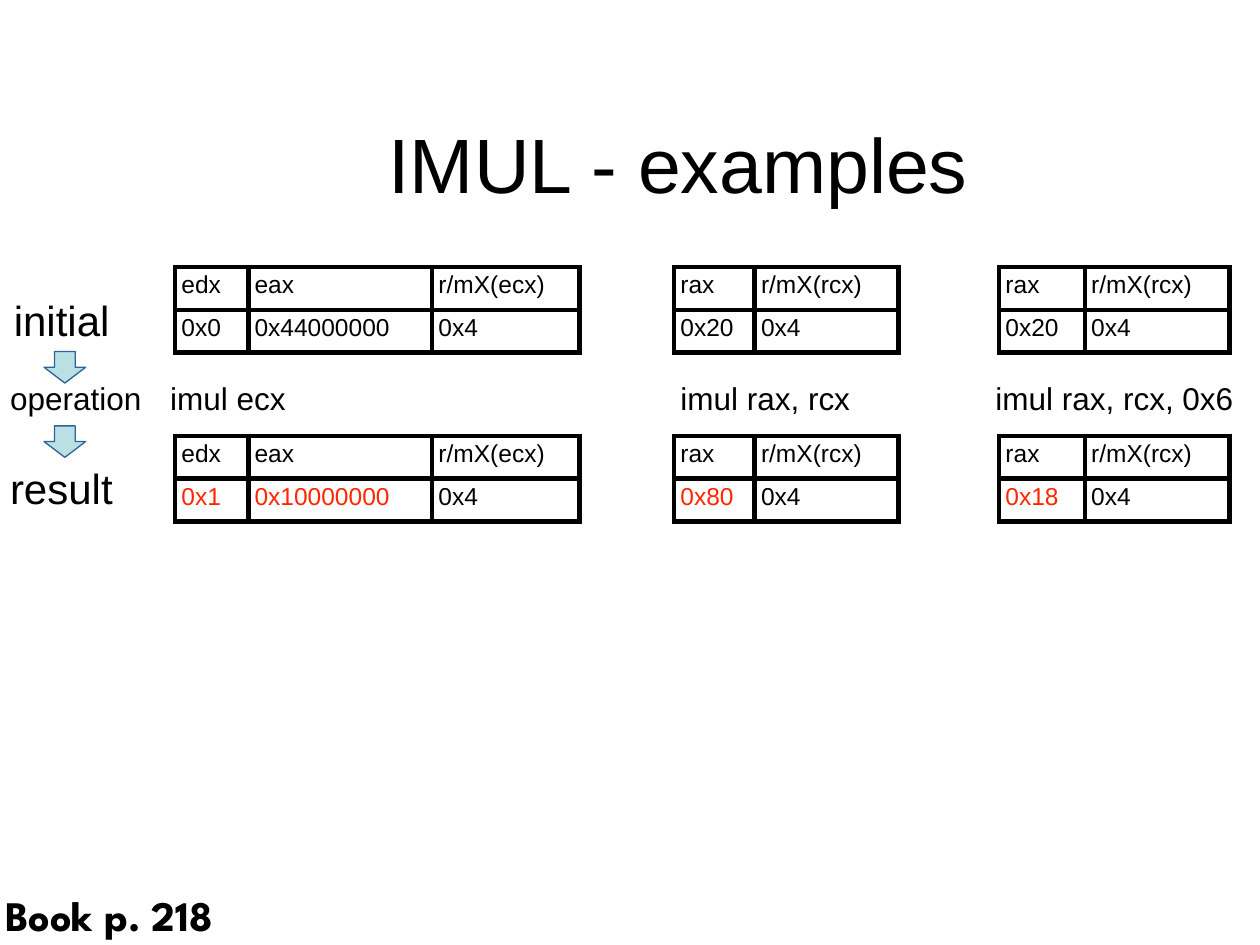
"""Builds the IMUL examples slide with register tables before and after each operation."""
import pptx
import pptx.dml.color
import pptx.enum.shapes
import pptx.enum.text
import pptx.oxml
import pptx.oxml.ns
import pptx.util
from pptx.util import Inches

COLORS = {"text": "000000", "changed": "FF2600", "arrow": "BBE0E3", "outline": "2F6299"}


def rgb(name):
    return pptx.dml.color.RGBColor.from_string(COLORS[name])


def write(frame, text, size, color="text", font="Arial", bold=False):
    para = frame.paragraphs[0]
    span = para.add_run()
    span.text = text
    formats = {"name": font, "size": pptx.util.Pt(size), "bold": bold}
    for key, value in formats.items():
        setattr(span.font, key, value)
    span.font.color.rgb = rgb(color)
    return para


deck = pptx.Presentation()
deck.slide_width, deck.slide_height = Inches(10), Inches(7.5)
page = deck.slides.add_slide(deck.slide_layouts[6])

title = page.shapes.add_textbox(Inches(0.75), Inches(0.56), Inches(9.27), Inches(1.47))
title_format = {
    "margin_left": 0, "margin_right": 0, "margin_top": 0, "margin_bottom": 0,
    "word_wrap": True, "vertical_anchor": pptx.enum.text.MSO_ANCHOR.MIDDLE,
}
for key, value in title_format.items():
    setattr(title.text_frame, key, value)
write(title.text_frame, "IMUL - examples", 44).alignment = pptx.enum.text.PP_ALIGN.CENTER

INITIAL_TOP, RESULT_TOP, ROW_HEIGHT = 2.12, 3.46, 0.34
SIDES = ("left", "right", "top", "bottom")
examples = [
    (1.39, [0.58, 1.46, 1.17], ["edx", "eax", "r/mX(ecx)"],
     ["0x0", "0x44000000", "0x4"], ["0x1", "0x10000000", "0x4"]),
    (5.35, [0.64, 1.14], ["rax", "r/mX(rcx)"], ["0x20", "0x4"], ["0x80", "0x4"]),
    (7.93, [0.68, 1.15], ["rax", "r/mX(rcx)"], ["0x20", "0x4"], ["0x18", "0x4"]),
]
for left, widths, registers, initial, result in examples:
    for top, values in ((INITIAL_TOP, initial), (RESULT_TOP, result)):
        frame = page.shapes.add_table(
            2, len(widths), Inches(left), Inches(top),
            Inches(sum(widths)), Inches(2 * ROW_HEIGHT))
        table = frame.table
        table.first_row = table.horz_banding = False
        for column, width in zip(table.columns, widths):
            column.width = Inches(width)
        for row_index, texts in enumerate((registers, values)):
            table.rows[row_index].height = Inches(ROW_HEIGHT)
            for column_index, text in enumerate(texts):
                cell = table.cell(row_index, column_index)
                for side in SIDES:
                    setattr(cell, f"margin_{side}", Inches(0.05))
                changed = row_index == 1 and text != initial[column_index]
                para = write(cell.text_frame, text, 14, "changed" if changed else "text")
                para.line_spacing = 0.93
                para.space_before = pptx.util.Pt(3)
                properties = cell._tc.get_or_add_tcPr()
                for side in SIDES:
                    properties.append(pptx.oxml.parse_xml(
                        f'<a:ln{side[0].upper()} {pptx.oxml.ns.nsdecls("a")} '
                        f'w="{pptx.util.Pt(3)}"><a:solidFill><a:srgbClr '
                        f'val="{COLORS["text"]}"/></a:solidFill></a:ln{side[0].upper()}>'))
                cell.fill.background()

labels = [
    ("imul ecx", 1.3, 2.96, 1.03, 0.39, 18, "Arial", False),
    ("imul rax, rcx", 5.35, 2.96, 1.46, 0.39, 18, "Arial", False),
    ("imul rax, rcx, 0x6", 7.85, 2.96, 2.01, 0.39, 18, "Arial", False),
    ("initial", 0.06, 2.29, 0.88, 0.48, 24, "Arial", False),
    ("operation", 0.03, 2.96, 1.16, 0.39, 18, "Arial", False),
    ("result", 0.03, 3.62, 0.93, 0.48, 24, "Arial", False),
    ("Book p. 218", -0.01, 7.01, 1.99, 0.51, 24, "League Spartan", True),
]
for text, left, top, width, height, size, font, bold in labels:
    box = page.shapes.add_textbox(Inches(left), Inches(top), Inches(width), Inches(height))
    box.text_frame.word_wrap = False
    for side in SIDES:
        setattr(box.text_frame, f"margin_{side}", Inches(0.05))
    write(box.text_frame, text, size, font=font, bold=bold)

for top in (2.79, 3.38):
    arrow = page.shapes.add_shape(
        pptx.enum.shapes.MSO_SHAPE.DOWN_ARROW,
        Inches(0.35), Inches(top), Inches(0.33), Inches(0.25))
    arrow.shadow.inherit = False
    arrow.adjustments[0], arrow.adjustments[1] = 0.5, 0.5
    arrow.fill.solid()
    arrow.fill.fore_color.rgb = rgb("arrow")
    arrow.line.color.rgb = rgb("outline")
    arrow.line.width = pptx.util.Pt(0.75)

deck.save("out.pptx")
